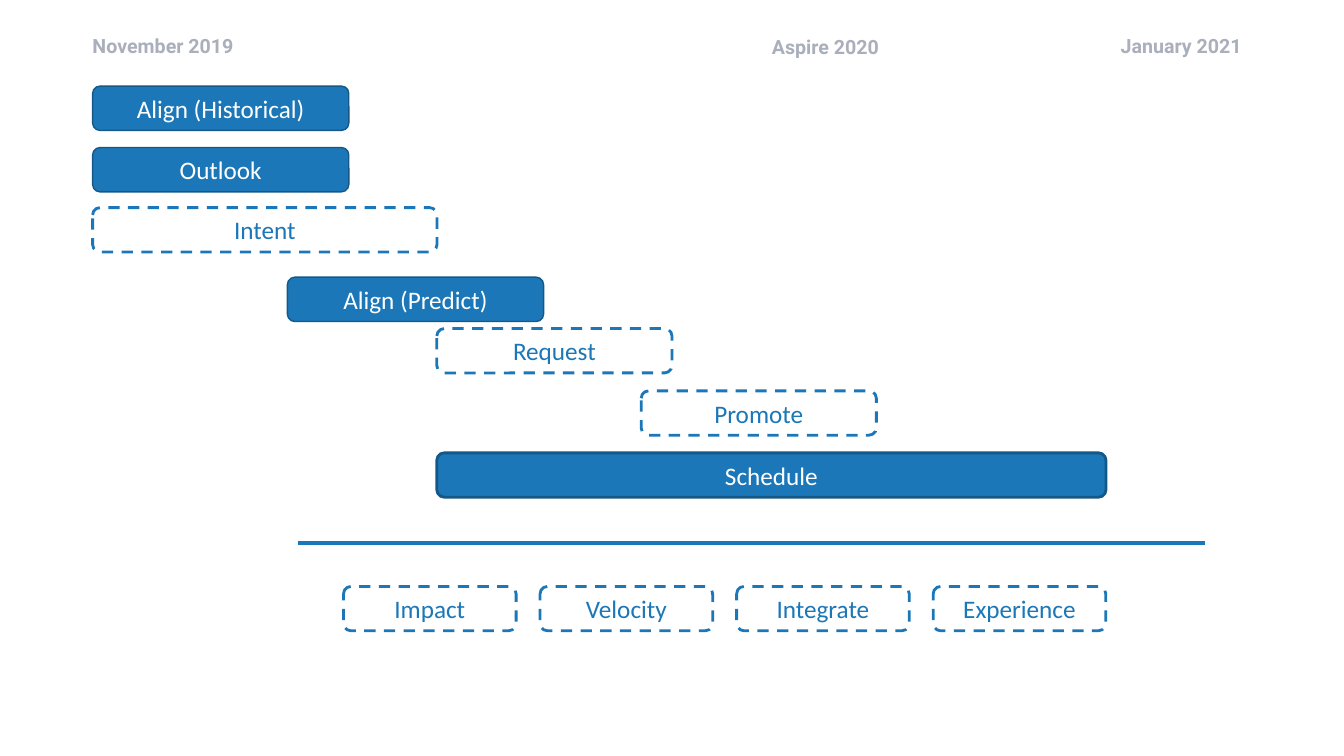
from dataclasses import dataclass

from pptx import Presentation
from pptx.dml.color import RGBColor
from pptx.enum.dml import MSO_LINE
from pptx.enum.shapes import MSO_CONNECTOR, MSO_SHAPE
from pptx.enum.text import MSO_ANCHOR, PP_ALIGN
from pptx.oxml.ns import qn
from pptx.util import Pt


@dataclass(frozen=True)
class Theme:
    blue: RGBColor = RGBColor(0x1B, 0x77, 0xB7)
    dark_blue: RGBColor = RGBColor(0x14, 0x58, 0x87)
    white: RGBColor = RGBColor(0xFF, 0xFF, 0xFF)
    gray: RGBColor = RGBColor(0xA9, 0xAF, 0xBB)
    date_font: str = "Roboto"
    bar_font: str = "Calibri"
    date_size: float = 14
    bar_size: float = 18


class RoadmapSlide:
    BAR_HEIGHT = 31.7

    def __init__(self, slide, theme):
        self.slide = slide
        self.theme = theme

    def set_text(self, frame, text, name, size, color, align, bold=False):
        frame.word_wrap = True
        paragraph = frame.paragraphs[0]
        paragraph.text = text
        paragraph.alignment = align
        font = paragraph.font
        font.name = name
        font.size = Pt(size)
        font.bold = bold
        font.color.rgb = color

    def date(self, text, left, top, align):
        box = self.slide.shapes.add_textbox(Pt(left), Pt(top), Pt(136), Pt(24.2))
        theme = self.theme
        self.set_text(box.text_frame, text, theme.date_font, theme.date_size,
                      theme.gray, align, bold=True)

    def bar(self, text, left, top, width, planned=False, line_width=1):
        """Draw a solid bar, or a dashed white one for planned work."""
        theme = self.theme
        shape = self.slide.shapes.add_shape(
            MSO_SHAPE.ROUNDED_RECTANGLE,
            Pt(left), Pt(top), Pt(width), Pt(self.BAR_HEIGHT))
        shape.shadow.inherit = False
        shape.fill.solid()
        shape.fill.fore_color.rgb = theme.white if planned else theme.blue
        shape.line.color.rgb = theme.blue if planned else theme.dark_blue
        shape.line.width = Pt(2 if planned else line_width)
        if planned:
            shape.line.dash_style = MSO_LINE.DASH
        shape.text_frame.vertical_anchor = MSO_ANCHOR.MIDDLE
        self.set_text(shape.text_frame, text, theme.bar_font, theme.bar_size,
                      theme.blue if planned else theme.white, PP_ALIGN.CENTER)

    def divider(self, left, right, top):
        line = self.slide.shapes.add_connector(
            MSO_CONNECTOR.STRAIGHT, Pt(left), Pt(top), Pt(right), Pt(top))
        line.line.color.rgb = self.theme.blue
        line.line.width = Pt(2.75)
        properties = line._element.spPr
        properties.append(properties.makeelement(qn("a:effectLst"), {}))


def main():
    presentation = Presentation()
    presentation.slide_width = Pt(960)
    presentation.slide_height = Pt(540)
    blank_layout = presentation.slide_layouts[6]
    roadmap = RoadmapSlide(presentation.slides.add_slide(blank_layout), Theme())

    roadmap.date("November 2019", 59, 20.9, PP_ALIGN.LEFT)
    roadmap.date("Aspire 2020", 499, 21.6, PP_ALIGN.RIGHT)
    roadmap.date("January 2021", 758.2, 20.9, PP_ALIGN.RIGHT)

    start, second_phase = 66.2, 312
    solid_width, planned_width = 183, 168
    roadmap.bar("Align (Historical)", start, 61.5, solid_width)
    roadmap.bar("Outlook", start, 105.4, solid_width)
    roadmap.bar("Intent", start, 148.3, 246, planned=True)
    roadmap.bar("Align (Predict)", 205.3, 198, solid_width)
    roadmap.bar("Request", second_phase, 234.7, planned_width, planned=True)
    roadmap.bar("Promote", 458, 279.2, planned_width, planned=True)
    roadmap.bar("Schedule", second_phase, 323.5, 478, line_width=2)

    outcomes = ["Impact", "Velocity", "Integrate", "Experience"]
    for index, outcome in enumerate(outcomes):
        roadmap.bar(outcome, 245.4 + index * 140.4, 418.9, 123.3, planned=True)

    roadmap.divider(213, 860.5, 388)
    presentation.save("out.pptx")


if __name__ == "__main__":
    main()
